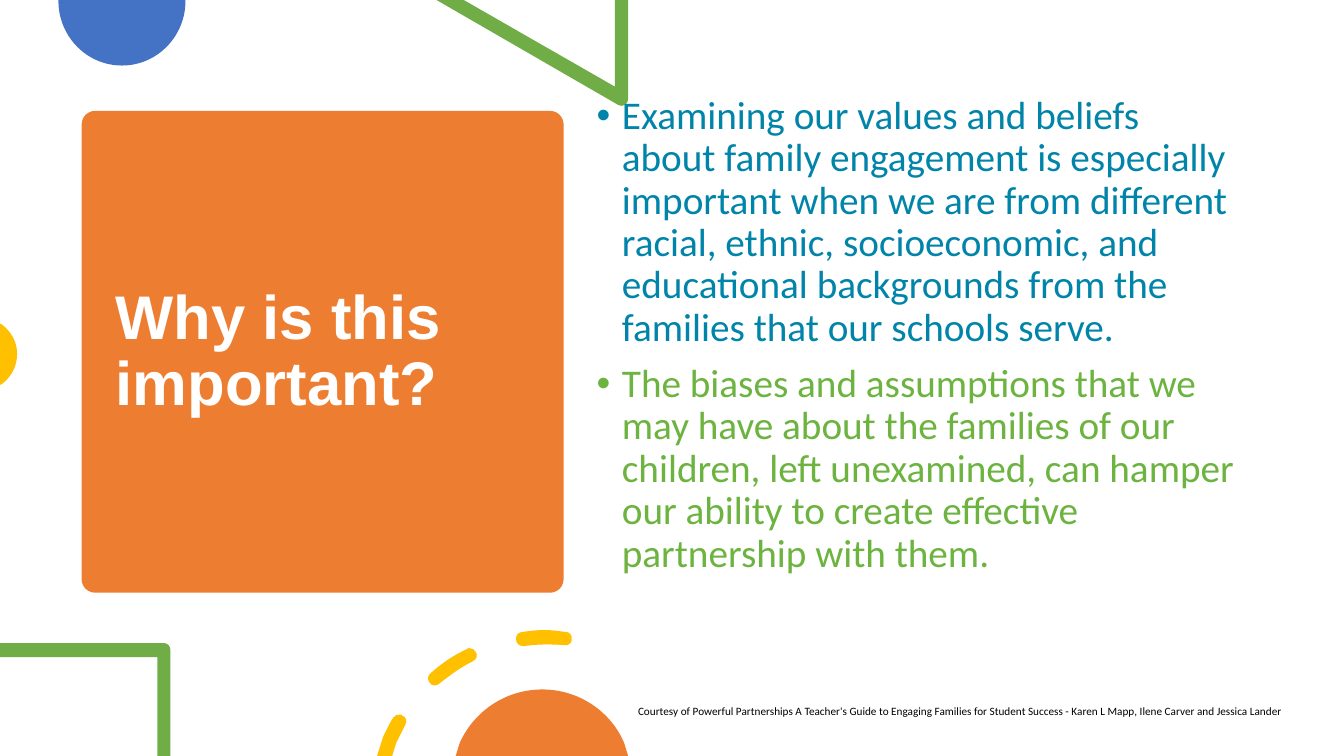
from lxml import etree
from pptx import Presentation
from pptx.dml.color import RGBColor
from pptx.enum.shapes import MSO_SHAPE
from pptx.enum.text import MSO_ANCHOR
from pptx.oxml.ns import qn
from pptx.util import Inches, Pt

RECTANGLE, ROUNDED = MSO_SHAPE.RECTANGLE, MSO_SHAPE.ROUNDED_RECTANGLE
TOP, MIDDLE = MSO_ANCHOR.TOP, MSO_ANCHOR.MIDDLE
SLIDE_WIDTH, SLIDE_HEIGHT = 13.33, 7.5
COLORS = {
    "white": "FFFFFF", "black": "000000", "orange": "ED7D31", "blue": "4472C4",
    "green": "70AD47", "yellow": "FFC000", "teal": "0084A9", "lime": "6CB33F",
}

# Outlines in inches: a start point, then (x, y) for a line
# or (x1, y1, x2, y2, x, y) for a cubic curve
BLUE_DISC = [[(1.84, 0), (0.58, 0), (0.58, 0.01), (0.58, 0.36, 0.86, 0.65, 1.21, 0.65),
              (1.56, 0.65, 1.84, 0.36, 1.84, 0.01)]]
GREEN_TRIANGLE = [[(6.23, 0), (6.1, 0), (6.1, 0.86), (4.6, 0), (4.33, 0), (6.13, 1.04),
                   (6.14, 1.05, 6.15, 1.05, 6.16, 1.05),
                   (6.2, 1.05, 6.23, 1.02, 6.23, 0.98)]]
YELLOW_DISC = [[(0, 3.21), (0, 3.82), (0.02, 3.81), (0.11, 3.74, 0.17, 3.64, 0.17, 3.51),
                (0.17, 3.39, 0.11, 3.29, 0.02, 3.22)]]
GREEN_CORNER = [[(1.63, 6.38), (0, 6.38), (0, 6.52), (1.56, 6.52), (1.56, 7.5),
                 (1.69, 7.5), (1.69, 6.45), (1.69, 6.41, 1.66, 6.38, 1.63, 6.38)]]
YELLOW_DASHES = [
    [(3.97, 7.09), (3.94, 7.08, 3.92, 7.1, 3.9, 7.12), (3.86, 7.18, 3.83, 7.25, 3.8, 7.31),
     (3.74, 7.5), (3.89, 7.5), (3.93, 7.37), (3.96, 7.31, 3.99, 7.25, 4.02, 7.19),
     (4.04, 7.16, 4.03, 7.11, 3.99, 7.1), (3.99, 7.09, 3.98, 7.09, 3.97, 7.09)],
    [(4.65, 6.43), (4.65, 6.43, 4.64, 6.43, 4.63, 6.44), (4.5, 6.5, 4.38, 6.58, 4.27, 6.68),
     (4.24, 6.7, 4.24, 6.75, 4.26, 6.77), (4.27, 6.79, 4.29, 6.8, 4.31, 6.8), (4.31, 6.8),
     (4.33, 6.8, 4.35, 6.79, 4.36, 6.78), (4.46, 6.7, 4.57, 6.62, 4.69, 6.56),
     (4.73, 6.54, 4.74, 6.5, 4.72, 6.47), (4.71, 6.44, 4.68, 6.43, 4.65, 6.43)],
    [(5.4, 6.25), (5.32, 6.25, 5.25, 6.26, 5.18, 6.27), (5.14, 6.27, 5.11, 6.31, 5.12, 6.35),
     (5.12, 6.38, 5.15, 6.41, 5.19, 6.41), (5.19, 6.41, 5.19, 6.41, 5.2, 6.41),
     (5.33, 6.39, 5.46, 6.39, 5.6, 6.4), (5.63, 6.41, 5.67, 6.38, 5.67, 6.35),
     (5.68, 6.31, 5.65, 6.27, 5.62, 6.27), (5.62, 6.27, 5.61, 6.27, 5.61, 6.27),
     (5.54, 6.26, 5.47, 6.25, 5.4, 6.25)],
]
ORANGE_DISC = [[(5.38, 6.84), (5.01, 6.84, 4.7, 7.06, 4.56, 7.37), (4.52, 7.5), (6.23, 7.5),
                (6.19, 7.37), (6.06, 7.06, 5.74, 6.84, 5.38, 6.84)]]

REASONS = [
    ("Examining our values and beliefs about family engagement is especially important "
     "when we are from different racial, ethnic, socioeconomic, and educational "
     "backgrounds from the families that our schools serve.", "teal"),
    ("The biases and assumptions that we may have about the families of our children, "
     "left unexamined, can hamper our ability to create effective partnership with them.",
     "lime"),
]
CREDIT = ("Courtesy of Powerful Partnerships A Teacher's Guide to Engaging Families for "
          "Student Success - Karen L Mapp, Ilene Carver and Jessica Lander")


def rgb(color):
    return RGBColor.from_string(COLORS[color])


def paint(shape, color):
    shape.shadow.inherit = False
    shape.fill.solid()
    shape.fill.fore_color.rgb = rgb(color)
    shape.line.fill.background()


def bend(shape, segments):
    """Turn the straight segments that have control points into cubic curves."""
    for line, segment in zip(list(shape._element.iter(qn("a:lnTo"))), segments):
        if len(segment) == 2:
            continue
        curve = etree.Element(qn("a:cubicBezTo"))
        for x, y in zip(segment[::2], segment[1::2]):
            etree.SubElement(curve, qn("a:pt"), x=str(Inches(x) - shape.left),
                             y=str(Inches(y) - shape.top))
        line.getparent().replace(line, curve)


def add_outline(slide, contours, color):
    builder = None
    for contour in contours:
        start, *ends = [(Inches(part[-2]), Inches(part[-1])) for part in contour]
        if builder is None:
            builder = slide.shapes.build_freeform(*start)
        else:
            builder.move_to(*start)
        builder.add_line_segments(ends, close=True)
    outline = builder.convert_to_shape()
    bend(outline, [segment for contour in contours for segment in contour[1:]])
    paint(outline, color)


def add_panel(slide, preset, left, top, width, height, color):
    panel = slide.shapes.add_shape(
        preset, Inches(left), Inches(top), Inches(width), Inches(height))
    paint(panel, color)
    return panel


def add_bullet(paragraph, color):
    properties = paragraph._p.get_or_add_pPr()
    properties.set("marL", str(Inches(0.25)))
    properties.set("indent", str(-Inches(0.25)))
    bullet_color = etree.SubElement(properties, qn("a:buClr"))
    etree.SubElement(bullet_color, qn("a:srgbClr"), val=COLORS[color])
    etree.SubElement(properties, qn("a:buFont"), typeface="Arial")
    etree.SubElement(properties, qn("a:buChar"), char="•")


def add_text(slide, left, top, width, height, paragraphs, font, size,
             bold=False, anchor=TOP, bulleted=False):
    box = slide.shapes.add_textbox(Inches(left), Inches(top), Inches(width), Inches(height))
    frame = box.text_frame
    frame.word_wrap = True
    frame.vertical_anchor = anchor
    for index, (text, color) in enumerate(paragraphs):
        paragraph = frame.add_paragraph() if index else frame.paragraphs[0]
        paragraph.line_spacing = 0.9
        if index:
            paragraph.space_before = Pt(10)
        if bulleted:
            add_bullet(paragraph, color)
        run = paragraph.add_run()
        run.text = text
        run.font.name, run.font.size, run.font.bold = font, Pt(size), bold
        run.font.color.rgb = rgb(color)


def main():
    deck = Presentation()
    deck.slide_width, deck.slide_height = Inches(SLIDE_WIDTH), Inches(SLIDE_HEIGHT)
    slide = deck.slides.add_slide(deck.slide_layouts[6])

    # White backdrop
    add_panel(slide, RECTANGLE, 0, 0, SLIDE_WIDTH, SLIDE_HEIGHT, "white")

    # Title panel
    title_panel = add_panel(slide, ROUNDED, 0.81, 1.1, 4.78, 4.78, "orange")
    title_panel.adjustments[0] = 0.028
    add_text(slide, 1.05, 1.22, 4.31, 4.56, [("Why is this important?", "white")],
             "Arial", 44, bold=True, anchor=MIDDLE)

    # Decorations at the top and left edges
    add_outline(slide, BLUE_DISC, "blue")
    add_outline(slide, GREEN_TRIANGLE, "green")
    add_outline(slide, YELLOW_DISC, "yellow")

    # Reasons
    add_text(slide, 5.82, 0.9, 6.59, 5.35, REASONS, "Calibri", 28, bulleted=True)

    # Decorations at the bottom edge
    add_outline(slide, GREEN_CORNER, "green")
    add_outline(slide, YELLOW_DASHES, "yellow")
    add_outline(slide, ORANGE_DISC, "orange")

    # Source credit
    add_text(slide, 6.23, 6.95, 7.1, 0.39, [(CREDIT, "black")], "Calibri", 8)

    deck.save("out.pptx")


if __name__ == "__main__":
    main()
